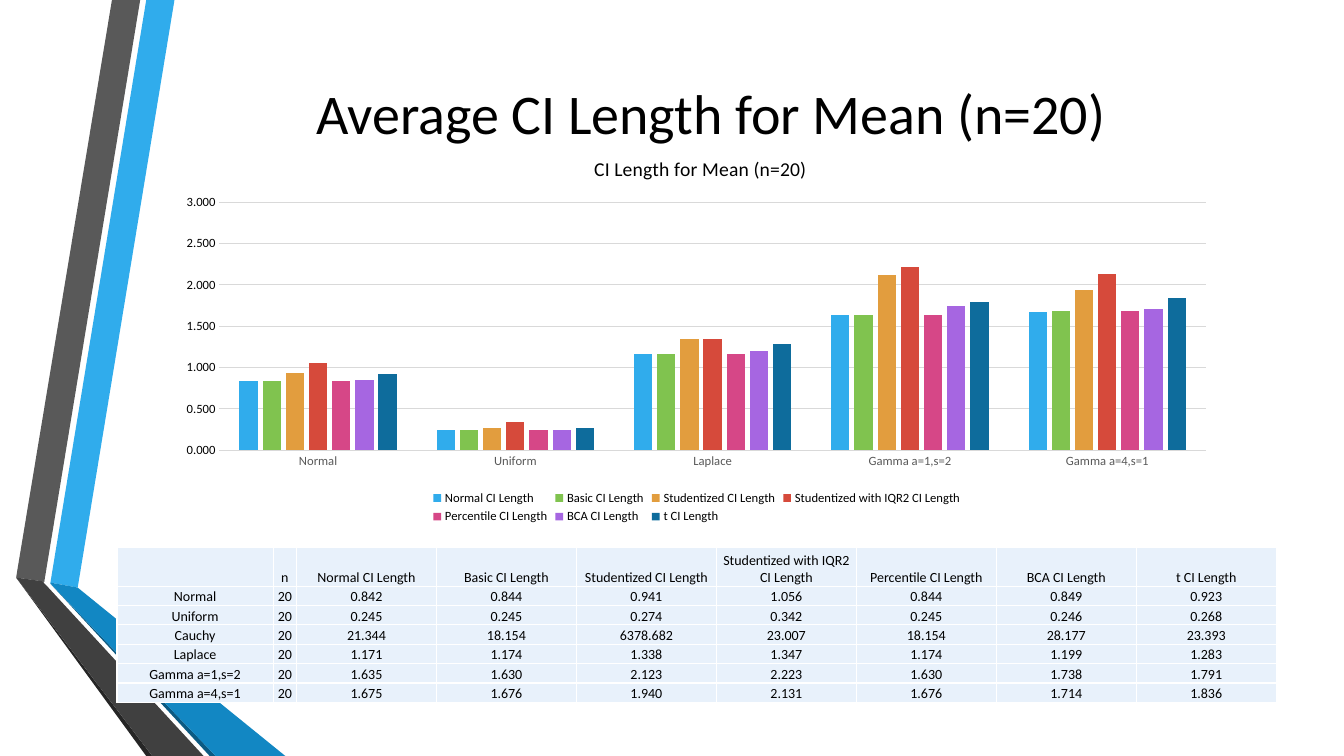
from dataclasses import dataclass
from typing import NamedTuple

from lxml.etree import SubElement
from pptx import Presentation
from pptx.chart.axis import CategoryAxis, ValueAxis
from pptx.chart.data import CategoryChartData
from pptx.chart.series import BarSeries
from pptx.dml.color import RGBColor
from pptx.enum.chart import XL_CHART_TYPE as ChartType
from pptx.enum.chart import XL_LEGEND_POSITION as LegendPosition
from pptx.enum.chart import XL_TICK_MARK as TickMark
from pptx.enum.text import MSO_ANCHOR as Anchor
from pptx.enum.text import MSO_AUTO_SIZE as AutoSize
from pptx.enum.text import PP_ALIGN as Align
from pptx.oxml import parse_xml
from pptx.oxml.ns import nsdecls, qn
from pptx.slide import Slide
from pptx.table import _Cell as Cell
from pptx.text.text import Font
from pptx.util import Inches, Pt

WIDTH, HEIGHT = Inches(13.33), Inches(7.5)


@dataclass(frozen=True)
class Theme:
    font: str = "Calibri"
    ink: str = "000000"
    muted: str = "595959"
    rule: str = "D9D9D9"
    cell: str = "E8F1FB"
    cell_border: str = "FFFFFF"
    title_size: float = 40
    chart_title_size: float = 14
    table_size: float = 10
    axis_size: float = 9


class Frame(NamedTuple):
    """Left, top, width and height in percent of the slide."""
    left: float
    top: float
    width: float
    height: float

    def emu(self) -> tuple[int, int, int, int]:
        return across(self.left), down(self.top), across(self.width), down(self.height)


class Ribbon(NamedTuple):
    """A filled outline with corners in percent of the slide."""
    color: str
    corners: list[tuple[float, float]]


class Method(NamedTuple):
    """An interval method with its column colour and charted lengths."""
    name: str
    color: str
    charted: list[float]


THEME = Theme()
TITLE = Frame(11.78, 2, 82.22, 25.6)
CHART = Frame(12.38, 18.53, 78.92, 51.33)
TABLE = Frame(8.7, 72.4, 86.27, 20.53)
LABEL_WIDTH, COUNT_WIDTH = 11.63, 1.73

RIBBONS = [
    Ribbon("30ACEC", [(3.75, 77.07), (5.78, 77.73), (12.98, 0), (10.88, 0)]),
    Ribbon("595959", [(10.43, 0), (8.33, 0), (1.2, 76.4), (3.3, 76.93)]),
    Ribbon("262626", [(1.2, 76.4), (10.88, 100), (11.33, 100)]),
    Ribbon("0C5A82", [(3.75, 77.2), (15.6, 100), (16.05, 100)]),
    Ribbon("1287C3", [(3.75, 77.2), (16.05, 100), (21.23, 100), (5.78, 77.73), (3.75, 77.07)]),
    Ribbon("404040", [(15.15, 100), (3.6, 77.73), (3.23, 77.07), (3.3, 76.93), (1.2, 76.4), (11.33, 100)]),
]
METHODS = [
    Method("Normal CI Length", "30ACEC", [0.84, 0.24, 1.17, 1.64, 1.67]),
    Method("Basic CI Length", "80C34F", [0.84, 0.25, 1.17, 1.63, 1.68]),
    Method("Studentized CI Length", "E29D3E", [0.94, 0.27, 1.34, 2.12, 1.94]),
    Method("Studentized with IQR2 CI Length", "D64A3B", [1.06, 0.34, 1.35, 2.22, 2.13]),
    Method("Percentile CI Length", "D64787", [0.84, 0.25, 1.17, 1.63, 1.68]),
    Method("BCA CI Length", "A666E1", [0.85, 0.25, 1.2, 1.74, 1.71]),
    Method("t CI Length", "0E6C9C", [0.92, 0.27, 1.28, 1.79, 1.84]),
]
SAMPLE_SIZE = 20
LENGTHS = {
    "Normal": [0.842, 0.844, 0.941, 1.056, 0.844, 0.849, 0.923],
    "Uniform": [0.245, 0.245, 0.274, 0.342, 0.245, 0.246, 0.268],
    "Cauchy": [21.344, 18.154, 6378.682, 23.007, 18.154, 28.177, 23.393],
    "Laplace": [1.171, 1.174, 1.338, 1.347, 1.174, 1.199, 1.283],
    "Gamma a=1,s=2": [1.635, 1.630, 2.123, 2.223, 1.630, 1.738, 1.791],
    "Gamma a=4,s=1": [1.675, 1.676, 1.940, 2.131, 1.676, 1.714, 1.836],
}
OFF_CHART = "Cauchy"


def across(percent: float) -> int:
    return round(WIDTH * percent / 100)


def down(percent: float) -> int:
    return round(HEIGHT * percent / 100)


def style_font(font: Font, size: float, color: str = THEME.ink) -> None:
    font.name, font.size, font.bold = THEME.font, Pt(size), False
    font.color.rgb = RGBColor.from_string(color)


def draw_ribbon(page: Slide, ribbon: Ribbon) -> None:
    start, *rest = [(across(x), down(y)) for x, y in ribbon.corners]
    builder = page.shapes.build_freeform(*start)
    builder.add_line_segments(rest, close=True)
    shape = builder.convert_to_shape()
    shape.shadow.inherit = False
    shape.fill.solid()
    shape.fill.fore_color.rgb = RGBColor.from_string(ribbon.color)
    shape.line.fill.background()


def write_title(page: Slide, text: str) -> None:
    box = page.shapes.title
    box.left, box.top, box.width, box.height = TITLE.emu()
    frame = box.text_frame
    frame.text, frame.vertical_anchor, frame.auto_size = text, Anchor.MIDDLE, AutoSize.NONE
    para = frame.paragraphs[0]
    para.alignment = Align.CENTER
    style_font(para.font, THEME.title_size)


def place(part, **settings: object) -> None:
    """Give a chart part (title or plot area) a manual layout."""
    layout = part.find(qn("c:layout"))
    if layout is None:
        layout = parse_xml(f"<c:layout {nsdecls('c')}/>")
        part.insert(0, layout)
    manual = SubElement(layout, qn("c:manualLayout"))
    for name, value in settings.items():
        SubElement(manual, qn(f"c:{name}")).set("val", str(value))


def style_axis(axis: CategoryAxis | ValueAxis, color: str) -> None:
    axis.major_tick_mark = axis.minor_tick_mark = TickMark.NONE
    style_font(axis.tick_labels.font, THEME.axis_size, color)


def color_series(series: BarSeries, color: str) -> None:
    series.format.fill.solid()
    series.format.fill.fore_color.rgb = RGBColor.from_string(color)
    series.invert_if_negative = False


def add_length_chart(page: Slide, heading: str) -> None:
    data = CategoryChartData(number_format="0.000")
    data.categories = [name for name in LENGTHS if name != OFF_CHART]
    for method in METHODS:
        data.add_series(method.name, method.charted)
    chart = page.shapes.add_chart(ChartType.COLUMN_CLUSTERED, *CHART.emu(), data).chart
    style_font(chart.font, THEME.table_size)

    chart.has_title = True
    title = chart.chart_title
    title.text_frame.text = heading
    style_font(title.text_frame.paragraphs[0].font, THEME.chart_title_size)
    title.include_in_layout = False
    place(title._element, xMode="edge", yMode="edge", x=0.4, y=0.03)

    chart.has_legend = True
    chart.legend.position = LegendPosition.BOTTOM
    chart.legend.include_in_layout = False
    style_font(chart.legend.font, THEME.axis_size)

    plot = chart.plots[0]
    plot.gap_width, plot.overlap, plot.vary_by_categories = 219, -27, False
    for series, method in zip(plot.series, METHODS):
        color_series(series, method.color)
    place(plot._element.getparent(), layoutTarget="inner", xMode="edge", yMode="edge",
          x=0.05, y=0.16, w=0.93, h=0.64)

    lengths, families = chart.value_axis, chart.category_axis
    style_axis(families, THEME.muted)
    style_axis(lengths, THEME.ink)
    lengths.minimum_scale, lengths.maximum_scale, lengths.major_unit = 0, 3, 0.5
    lengths.tick_labels.number_format = "0.000"
    lengths.tick_labels.number_format_is_linked = False
    lengths.format.line.fill.background()
    for line in (families.format.line, lengths.major_gridlines.format.line):
        line.color.rgb, line.width = RGBColor.from_string(THEME.rule), Pt(0.75)


def fill_cell(cell: Cell, text: str) -> None:
    cell.text, cell.vertical_anchor = text, Anchor.BOTTOM
    cell.margin_left = cell.margin_right = cell.margin_top = Inches(0.01)
    cell.margin_bottom = 0
    para = cell.text_frame.paragraphs[0]
    para.alignment = Align.CENTER
    style_font(para.font, THEME.table_size)
    for side in ("lnL", "lnR", "lnT", "lnB"):
        cell._tc.get_or_add_tcPr().append(parse_xml(
            f'<a:{side} {nsdecls("a")} w="{Pt(1)}"><a:solidFill>'
            f'<a:srgbClr val="{THEME.cell_border}"/></a:solidFill></a:{side}>'))
    cell.fill.solid()
    cell.fill.fore_color.rgb = RGBColor.from_string(THEME.cell)


def add_length_table(page: Slide) -> None:
    rows = [["", "n", *(method.name for method in METHODS)]]
    rows += [[name, str(SAMPLE_SIZE), *(f"{value:.3f}" for value in values)]
             for name, values in LENGTHS.items()]
    table = page.shapes.add_table(len(rows), len(rows[0]), *TABLE.emu()).table
    table.first_row = table.horz_banding = False
    method_width = (TABLE.width - LABEL_WIDTH - COUNT_WIDTH) / len(METHODS)
    for column, width in zip(table.columns, [LABEL_WIDTH, COUNT_WIDTH] + [method_width] * len(METHODS)):
        column.width = across(width)
    for index, (row, texts) in enumerate(zip(table.rows, rows)):
        row.height = down(TABLE.height / (len(rows) + 1) * (1 if index else 2))
        for cell, text in zip(row.cells, texts):
            fill_cell(cell, text)


def main() -> None:
    deck = Presentation()
    deck.slide_width, deck.slide_height = WIDTH, HEIGHT
    page = deck.slides.add_slide(deck.slide_layouts[5])
    for ribbon in RIBBONS:
        draw_ribbon(page, ribbon)
    write_title(page, f"Average CI Length for Mean (n={SAMPLE_SIZE})")
    add_length_chart(page, f"CI Length for Mean (n={SAMPLE_SIZE})")
    add_length_table(page)
    deck.save("out.pptx")


if __name__ == "__main__":
    main()
